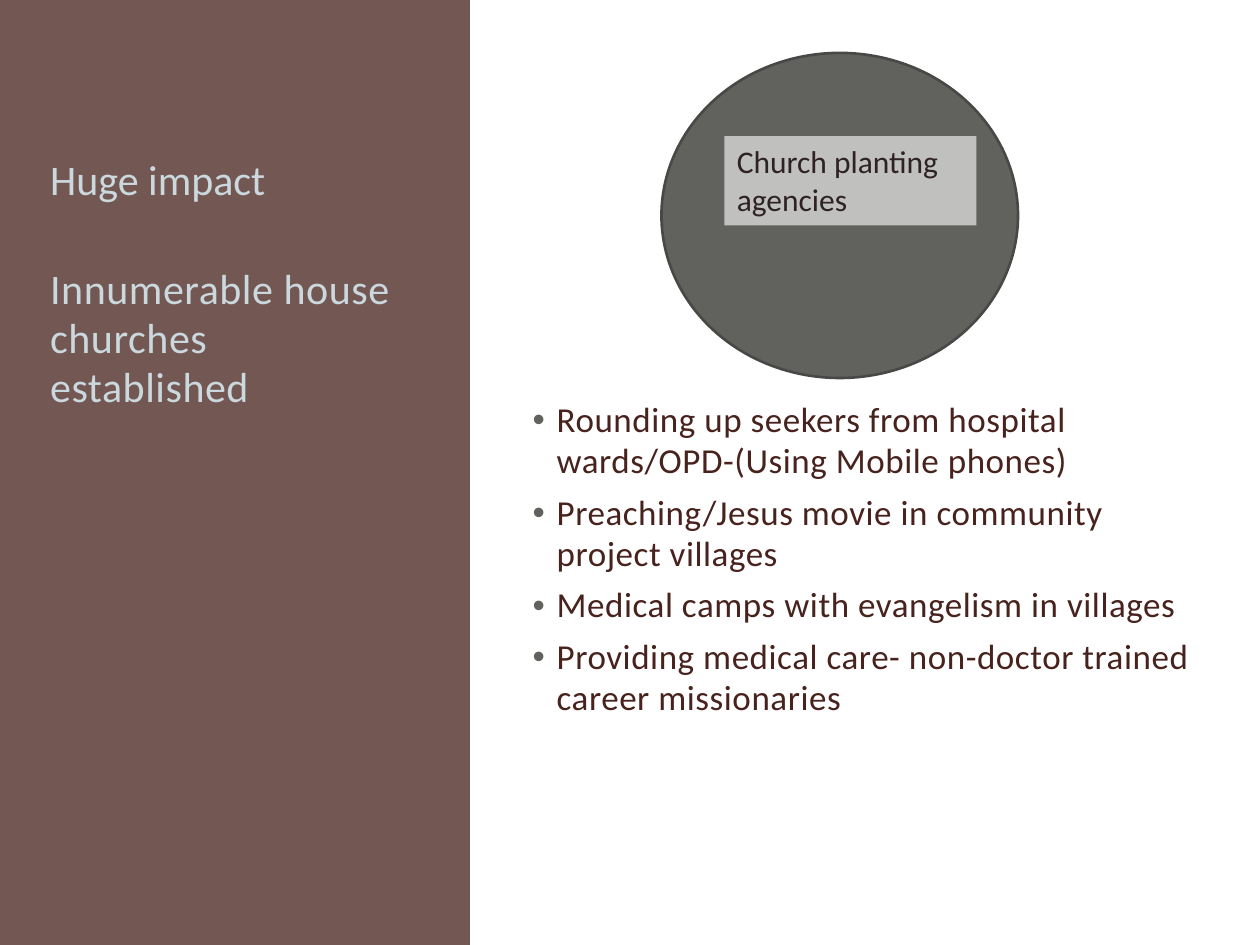
from dataclasses import dataclass

from lxml.etree import SubElement
from pptx import Presentation
from pptx.dml.color import RGBColor
from pptx.enum.shapes import MSO_SHAPE
from pptx.oxml.ns import qn
from pptx.util import Inches, Pt


@dataclass(frozen=True)
class Theme:
    font: str = "Calibri"
    maroon: str = "48231E"
    pale: str = "CBD8DD"
    gray: str = "61625E"
    outline: str = "484946"
    label_fill: str = "C0C1BE"
    label_text: str = "2E2224"
    heading_size: int = 24
    bullet_size: int = 20
    label_size: int = 18
    tracking: int = 30
    panel_opacity: int = 76


class SlideBuilder:
    """Adds styled elements to the current slide."""

    def __init__(self, slide, theme):
        self.slide = slide
        self.theme = theme

    def shape(self, kind, box, fill, outline=None, opacity=None):
        shape = self.slide.shapes.add_shape(kind, *map(Inches, box))
        shape.shadow.inherit = False
        shape.fill.solid()
        shape.fill.fore_color.rgb = RGBColor.from_string(fill)
        if outline:
            shape.line.color.rgb = RGBColor.from_string(outline)
            shape.line.width = Pt(1.5)
        else:
            shape.line.fill.background()
        if opacity:
            color = shape.fill._xPr.find(qn("a:solidFill"))[0]
            SubElement(color, qn("a:alpha"), val=str(opacity * 1000))
        return shape

    def text(self, box, lines, size, color, tracking=0, bullet_color=None, spacing=0.98):
        frame = self.slide.shapes.add_textbox(*map(Inches, box)).text_frame
        frame.word_wrap = True
        for index, line in enumerate(lines):
            paragraph = frame.paragraphs[0] if index == 0 else frame.add_paragraph()
            paragraph_format = {"line_spacing": spacing, "space_before": Pt(6 if index else 0)}
            for name, value in paragraph_format.items():
                setattr(paragraph, name, value)
            if bullet_color:
                self.bullet(paragraph, bullet_color)
            run = paragraph.add_run()
            run.text = line
            for name, value in {"name": self.theme.font, "size": Pt(size)}.items():
                setattr(run.font, name, value)
            run.font.color.rgb = RGBColor.from_string(color)
            if tracking:
                run._r.get_or_add_rPr().set("spc", str(tracking))

    def bullet(self, paragraph, color):
        properties = paragraph._p.get_or_add_pPr()
        indent = Inches(0.19)
        for name, value in {"marL": indent, "indent": -indent}.items():
            properties.set(name, str(value))
        bullet_color = SubElement(properties, qn("a:buClr"))
        SubElement(bullet_color, qn("a:srgbClr"), val=color)
        SubElement(properties, qn("a:buFont"), typeface="Arial")
        SubElement(properties, qn("a:buChar"), char="•")


def main():
    theme = Theme()
    presentation = Presentation()
    presentation.slide_width, presentation.slide_height = Inches(10), Inches(7.5)
    slide = presentation.slides.add_slide(presentation.slide_layouts[6])
    builder = SlideBuilder(slide, theme)

    builder.shape(MSO_SHAPE.RECTANGLE, (0, 0, 3.73, 7.5), theme.maroon,
                  opacity=theme.panel_opacity)
    builder.text((0.3, 1.19, 3.1, 0.48), ["Huge impact"], theme.heading_size, theme.pale)
    builder.text((0.3, 2.05, 3.1, 4.78), ["Innumerable house churches established"],
                 theme.heading_size, theme.pale, theme.tracking)
    activities = [
        "Rounding up seekers from hospital wards/OPD-(Using Mobile phones)",
        "Preaching/Jesus movie in community project villages",
        "Medical camps with evangelism in villages",
        "Providing medical care- non-doctor trained career missionaries",
    ]
    builder.text((4.13, 3.12, 5.54, 3.7), activities, theme.bullet_size, theme.maroon,
                 theme.tracking, bullet_color=theme.gray)

    builder.shape(MSO_SHAPE.FLOWCHART_CONNECTOR, (5.25, 0.42, 2.83, 2.58),
                  theme.gray, outline=theme.outline)
    label_box = (5.75, 1.08, 2, 0.71)
    builder.shape(MSO_SHAPE.RECTANGLE, label_box, theme.label_fill)
    builder.text(label_box, ["Church planting agencies"], theme.label_size,
                 theme.label_text, spacing=1.0)

    presentation.save("out.pptx")


if __name__ == "__main__":
    main()
